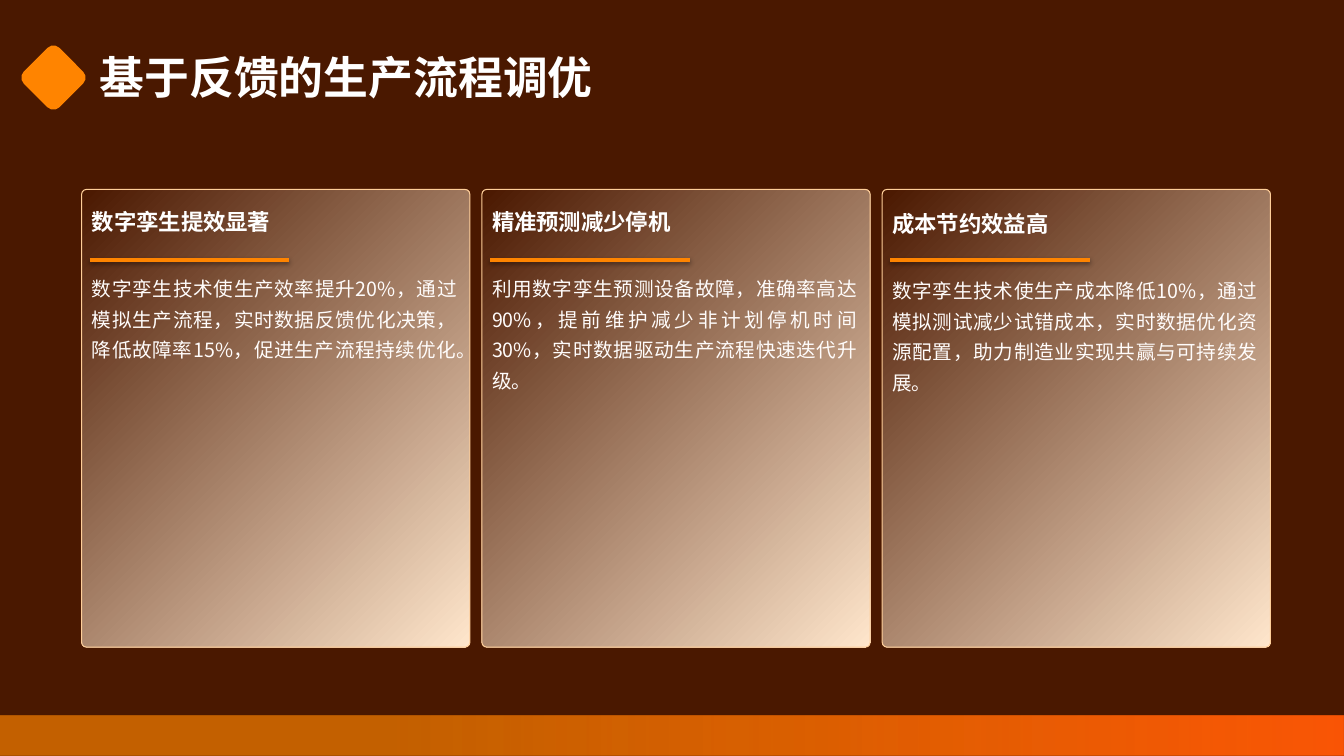
import pptx
import pptx.dml.color
import pptx.enum.shapes
import pptx.enum.text
import pptx.oxml
import pptx.oxml.ns
import pptx.util
from lxml import etree

Inches = pptx.util.Inches
Pt = pptx.util.Pt
RGBColor = pptx.dml.color.RGBColor
qn = pptx.oxml.ns.qn
MSO_SHAPE = pptx.enum.shapes.MSO_SHAPE
PP_ALIGN = pptx.enum.text.PP_ALIGN
MSO_ANCHOR = pptx.enum.text.MSO_ANCHOR

TITLE = "基于反馈的生产流程调优"
# Heading, body, extra drop of the text in inches
CARDS = [
    ("数字孪生提效显著",
     "数字孪生技术使生产效率提升20%，通过模拟生产流程，实时数据反馈优化决策，降低故障率15%，促进生产流程持续优化。", 0),
    ("精准预测减少停机",
     "利用数字孪生预测设备故障，准确率高达90%，提前维护减少非计划停机时间30%，实时数据驱动生产流程快速迭代升级。", 0),
    ("成本节约效益高",
     "数字孪生技术使生产成本降低10%，通过模拟测试减少试错成本，实时数据优化资源配置，助力制造业实现共赢与可持续发展。", 0.02),
]

FONT = "Noto Sans CJK SC"
BROWN = RGBColor(0x4A, 0x18, 0x00)
ORANGE = RGBColor(0xFF, 0x84, 0x00)
RED_ORANGE = RGBColor(0xFB, 0x56, 0x07)
CREAM = RGBColor(0xFF, 0xE6, 0xCC)
PEACH = RGBColor(0xFF, 0xCE, 0x99)
WHITE = RGBColor(0xFF, 0xFF, 0xFF)
OFF_WHITE = RGBColor(0xFF, 0xFC, 0xFB)

CARD_LEFT, CARD_TOP, CARD_WIDTH, CARD_HEIGHT = 0.81, 1.88, 3.85, 4.54
CARD_PITCH = 3.97
TEXT_INDENT, TEXT_WIDTH = 0.06, 3.66
RULE_INDENT, RULE_TOP, RULE_LENGTH = 0.08, 2.58, 1.98


def add_panel(slide, kind, left, top, width, height):
    shape = slide.shapes.add_shape(
        kind, Inches(left), Inches(top), Inches(width), Inches(height))
    shape.shadow.inherit = False
    shape.line.fill.background()
    return shape


def fill_gradient(shape, stops, angle):
    """Fill with two (position, colour) stops; angle is counter-clockwise."""
    shape.fill.gradient()
    shape.fill.gradient_angle = angle
    for stop, (position, color) in zip(shape.fill.gradient_stops, stops):
        stop.position = position
        stop.color.rgb = color


def add_text(slide, text, left, top, width, height, size, color, bold=False,
             insets=(0.1, 0.05, 0.1, 0.05), anchor=MSO_ANCHOR.MIDDLE):
    box = slide.shapes.add_textbox(
        Inches(left), Inches(top), Inches(width), Inches(height))
    frame = box.text_frame
    frame.word_wrap = True
    frame.vertical_anchor = anchor
    (frame.margin_left, frame.margin_top,
     frame.margin_right, frame.margin_bottom) = map(Inches, insets)
    paragraph = frame.paragraphs[0]
    run = paragraph.add_run()
    run.text = text
    run.font.name = FONT
    run.font.size = Pt(size)
    run.font.bold = bold
    run.font.color.rgb = color
    east_asian = etree.SubElement(run.font._element, qn("a:ea"))
    east_asian.set("typeface", FONT)
    return paragraph


def add_rule(slide, left, top, length):
    """Draw a horizontal orange line with a soft shadow below it."""
    rule = slide.shapes.add_connector(
        pptx.enum.shapes.MSO_CONNECTOR.STRAIGHT,
        Inches(left), Inches(top), Inches(left + length), Inches(top))
    rule.line.color.rgb = ORANGE
    rule.line.width = Pt(3)
    effects = etree.SubElement(rule._element.spPr, qn("a:effectLst"))
    shadow = etree.SubElement(
        effects, qn("a:outerShdw"), blurRad=str(Pt(3.1)), dist=str(Pt(1.6)),
        dir="5400000", rotWithShape="0")
    black = etree.SubElement(shadow, qn("a:srgbClr"), val="000000")
    etree.SubElement(black, qn("a:alpha"), val="38000")


def add_card(slide, left, heading, body, drop):
    panel = add_panel(slide, MSO_SHAPE.ROUNDED_RECTANGLE,
                      left, CARD_TOP, CARD_WIDTH, CARD_HEIGHT)
    panel.adjustments[0] = 0.012
    fill_gradient(panel, [(0, BROWN), (1, CREAM)], 315)
    panel.line.color.rgb = PEACH
    panel.line.width = Pt(0.75)

    text_left = left + TEXT_INDENT
    paragraph = add_text(slide, body, text_left, 2.68 + drop, TEXT_WIDTH, 3.6,
                         14, OFF_WHITE, insets=(0.04, 0, 0, 0),
                         anchor=MSO_ANCHOR.TOP)
    paragraph.alignment = PP_ALIGN.JUSTIFY
    paragraph.line_spacing = 1.3
    paragraph.space_before = paragraph.space_after = Pt(3)
    add_text(slide, heading, text_left, 1.93 + drop, TEXT_WIDTH, 0.53,
             16, WHITE, bold=True, insets=(0.04, 0.05, 0.1, 0.05))
    add_rule(slide, left + RULE_INDENT, RULE_TOP, RULE_LENGTH)


def main():
    presentation = pptx.Presentation()
    presentation.slide_width = Inches(13.33)
    presentation.slide_height = Inches(7.5)
    slide = presentation.slides.add_slide(presentation.slide_layouts[6])
    slide.background.fill.solid()
    slide.background.fill.fore_color.rgb = BROWN

    footer = add_panel(slide, MSO_SHAPE.RECTANGLE, 0, 7.1, 13.33, 0.4)
    fill_gradient(footer, [(0.29, ORANGE), (1, RED_ORANGE)], 0)
    first_color = footer._element.spPr.find(".//" + qn("a:srgbClr"))
    etree.SubElement(first_color, qn("a:alpha"), val="67000")

    for index, card in enumerate(CARDS):
        add_card(slide, CARD_LEFT + index * CARD_PITCH, *card)

    diamond = add_panel(slide, MSO_SHAPE.ROUNDED_RECTANGLE,
                        0.28, 0.52, 0.5, 0.5)
    diamond.rotation = 45
    diamond.fill.solid()
    diamond.fill.fore_color.rgb = ORANGE
    title = add_text(slide, TITLE, 0.89, 0.31, 12.09, 0.79, 32, WHITE, bold=True)
    title.line_spacing = 1.2

    presentation.save("out.pptx")


if __name__ == "__main__":
    main()
